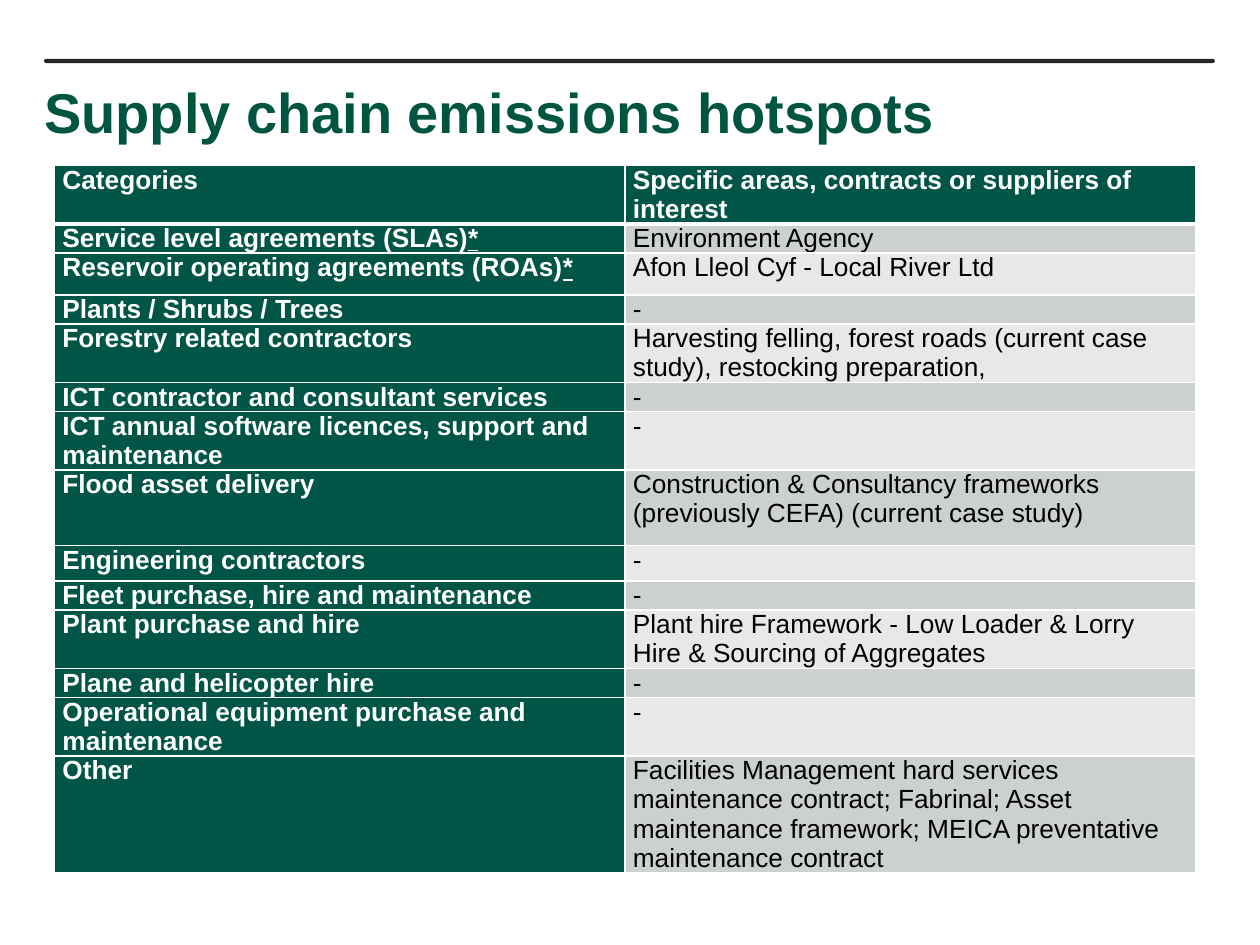
from lxml import etree
from pptx import Presentation
from pptx.dml.color import RGBColor
from pptx.enum.shapes import MSO_SHAPE
from pptx.enum.text import MSO_ANCHOR, PP_ALIGN
from pptx.oxml.ns import qn
from pptx.util import Pt

ROUND = MSO_SHAPE.ROUNDED_RECTANGLE
LEFT, TOP, MID = PP_ALIGN.LEFT, MSO_ANCHOR.TOP, MSO_ANCHOR.MIDDLE
HUES = {"title": "005541", "green": "005546", "dark": "CCD1CF", "light": "E7E9E9",
        "rule": "262626", "white": "FFFFFF", "black": "000000"}


def write(frame, text, size=15, hue="black", bold=False, anchor=TOP):
    """Fill a frame with one paragraph; an asterisk is underlined."""
    frame.word_wrap = True
    frame.vertical_anchor = anchor
    para = frame.paragraphs[0]
    para.alignment = LEFT
    for part in text.partition("*"):
        if part:
            run = para.add_run()
            run.text = part
            font = run.font
            font.name, font.size, font.bold = "Arial", Pt(size), bold
            font.color.rgb = RGBColor.from_string(HUES[hue])
            if part == "*":
                font.underline = True


def edge(cell, side, width):
    """Draw one white border of a cell."""
    props = cell._tc.get_or_add_tcPr()
    line = etree.SubElement(props, qn(f"a:ln{side}"), w=str(Pt(width)))
    fill = etree.SubElement(line, qn("a:solidFill"))
    etree.SubElement(fill, qn("a:srgbClr"), val=HUES["white"])


deck = Presentation()
deck.slide_width, deck.slide_height = Pt(720), Pt(540)
slide = deck.slides.add_slide(deck.slide_layouts[5])

# Rule above the title
rule = slide.shapes.add_shape(ROUND, Pt(25.2), Pt(33.6), Pt(669), Pt(2.4))
rule.adjustments[0] = 0.5
rule.shadow.inherit = False
rule.fill.solid()
rule.fill.fore_color.rgb = RGBColor.from_string(HUES["rule"])
rule.line.fill.background()

# Title
title = slide.shapes.title
title.left, title.top, title.width, title.height = Pt(25.2), Pt(37.4), Pt(518.4), Pt(52)
frame = title.text_frame
frame.margin_left = frame.margin_right = frame.margin_top = frame.margin_bottom = 0
write(frame, "Supply chain emissions hotspots", size=32, hue="title", bold=True, anchor=MID)

# Table rows: height, category, areas of interest
rows = [
    (25.2, "Categories", "Specific areas, contracts or suppliers of interest"),
    (12.2, "Service level agreements (SLAs)*", "Environment Agency"),
    (23.8, "Reservoir operating agreements (ROAs)*", "Afon Lleol Cyf - Local River Ltd"),
    (12.2, "Plants / Shrubs / Trees", "-"),
    (25.2, "Forestry related contractors",
     "Harvesting felling, forest roads (current case study), restocking preparation,"),
    (15.1, "ICT contractor and consultant services", "-"),
    (25.2, "ICT annual software licences, support and maintenance", "-"),
    (43.2, "Flood asset delivery",
     "Construction & Consultancy frameworks (previously CEFA) (current case study)"),
    (20.2, "Engineering contractors", "-"),
    (12.2, "Fleet purchase, hire and maintenance", "-"),
    (25.2, "Plant purchase and hire",
     "Plant hire Framework - Low Loader & Lorry Hire & Sourcing of Aggregates"),
    (12.2, "Plane and helicopter hire", "-"),
    (25.2, "Operational equipment purchase and maintenance", "-"),
    (49.7, "Other",
     "Facilities Management hard services maintenance contract; Fabrinal; Asset "
     "maintenance framework; MEICA preventative maintenance contract"),
]
total = sum(row[0] for row in rows)
table = slide.shapes.add_table(len(rows), 2, Pt(31.2), Pt(94.6), Pt(652), Pt(total)).table
for col in table.columns:
    col.width = Pt(326)

for r, (height, *texts) in enumerate(rows):
    table.rows[r].height = Pt(height)
    for c, text in enumerate(texts):
        cell = table.cell(r, c)
        cell.margin_left = cell.margin_right = Pt(4.5)
        cell.margin_top = cell.margin_bottom = 0
        head = r == 0 or c == 0
        for side in "LRTB":
            thick = (r, side) in ((0, "B"), (1, "T"))
            edge(cell, side, 3 if thick else 1)
        back = "green" if head else "dark" if r % 2 else "light"
        cell.fill.solid()
        cell.fill.fore_color.rgb = RGBColor.from_string(HUES[back])
        write(cell.text_frame, text, hue="white" if head else "black", bold=head)

deck.save("out.pptx")
